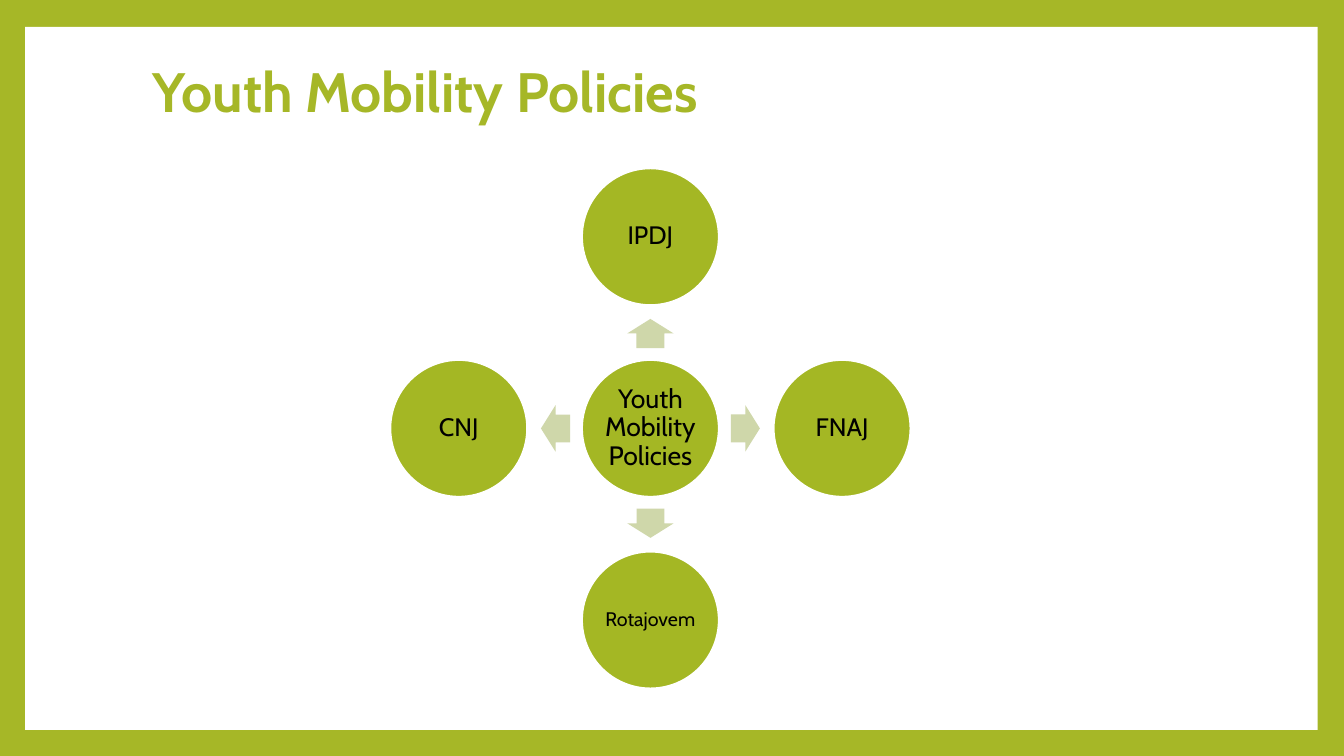
from math import cos, radians, sin

from pptx import Presentation
from pptx.dml.color import RGBColor
from pptx.enum.shapes import MSO_SHAPE as Kind
from pptx.enum.text import MSO_ANCHOR as Anchor, PP_ALIGN as Align
from pptx.util import Pt

LIME = "A6B727"
DISC = "A4B724"
PALE = "CFD7AA"
WHITE = "FFFFFF"
BLACK = "000000"


def paint(fill, color):
    fill.solid()
    fill.fore_color.rgb = RGBColor.from_string(color)


def write(shape, text, font="Cabin", size=18, color=BLACK, bold=False,
          align=Align.CENTER, pad=(1.5, 1.5)):
    frame = shape.text_frame
    frame.word_wrap = True
    frame.vertical_anchor = Anchor.MIDDLE
    frame.margin_left = frame.margin_right = Pt(pad[0])
    frame.margin_top = frame.margin_bottom = Pt(pad[1])
    para = frame.paragraphs[0]
    para.alignment = align
    para.line_spacing = 0.9
    run = para.add_run()
    run.text = text
    run.font.name = font
    run.font.size = Pt(size)
    run.font.bold = bold
    run.font.color.rgb = RGBColor.from_string(color)


class Canvas:
    def __init__(self, slide, font):
        self.slide = slide
        self.font = font

    def shape(self, kind, left, top, width, height, color):
        item = self.slide.shapes.add_shape(
            kind, Pt(left), Pt(top), Pt(width), Pt(height))
        item.shadow.inherit = False
        paint(item.fill, color)
        item.line.fill.background()
        return item

    def title(self, text, left, top, width, height):
        box = self.slide.shapes.add_textbox(
            Pt(left), Pt(top), Pt(width), Pt(height))
        write(box, text, font=self.font, size=39.6, color=LIME, bold=True,
              align=Align.LEFT, pad=(7.2, 3.6))

    def disc(self, text, x, y, size, span=97.9):
        item = self.shape(Kind.OVAL, x - span / 2, y - span / 2,
                          span, span, DISC)
        paint(item.line.fill, WHITE)
        item.line.width = Pt(1.5)
        write(item, text, font=self.font, size=size)

    def arrow(self, x, y, turn, width=20.8, height=33.2):
        item = self.shape(Kind.RIGHT_ARROW, x - width / 2, y - height / 2,
                          width, height, PALE)
        item.adjustments[0] = 0.6
        item.adjustments[1] = 0.5
        item.rotation = turn


def main():
    deck = Presentation()
    deck.slide_width, deck.slide_height = Pt(960), Pt(540)
    slide = deck.slides.add_slide(deck.slide_layouts[6])
    paint(slide.background.fill, LIME)
    canvas = Canvas(slide, "Cabin")
    canvas.shape(Kind.RECTANGLE, 18, 19.2, 923.3, 502.1, WHITE)
    canvas.title("Youth Mobility Policies", 102.2, 48.2, 765.4, 38.2)

    hub_x, hub_y = 464.6, 306
    reach, gap = 136.9, 67.8
    canvas.disc("Youth Mobility Policies", hub_x, hub_y, 19)
    spokes = [("IPDJ", 18, 270), ("FNAJ", 18, 0),
              ("Rotajovem", 14, 90), ("CNJ", 18, 180)]
    for name, size, turn in spokes:
        dx, dy = cos(radians(turn)), sin(radians(turn))
        canvas.arrow(hub_x + gap * dx, hub_y + gap * dy, turn)
        canvas.disc(name, hub_x + reach * dx, hub_y + reach * dy, size)

    deck.save("out.pptx")


if __name__ == "__main__":
    main()
